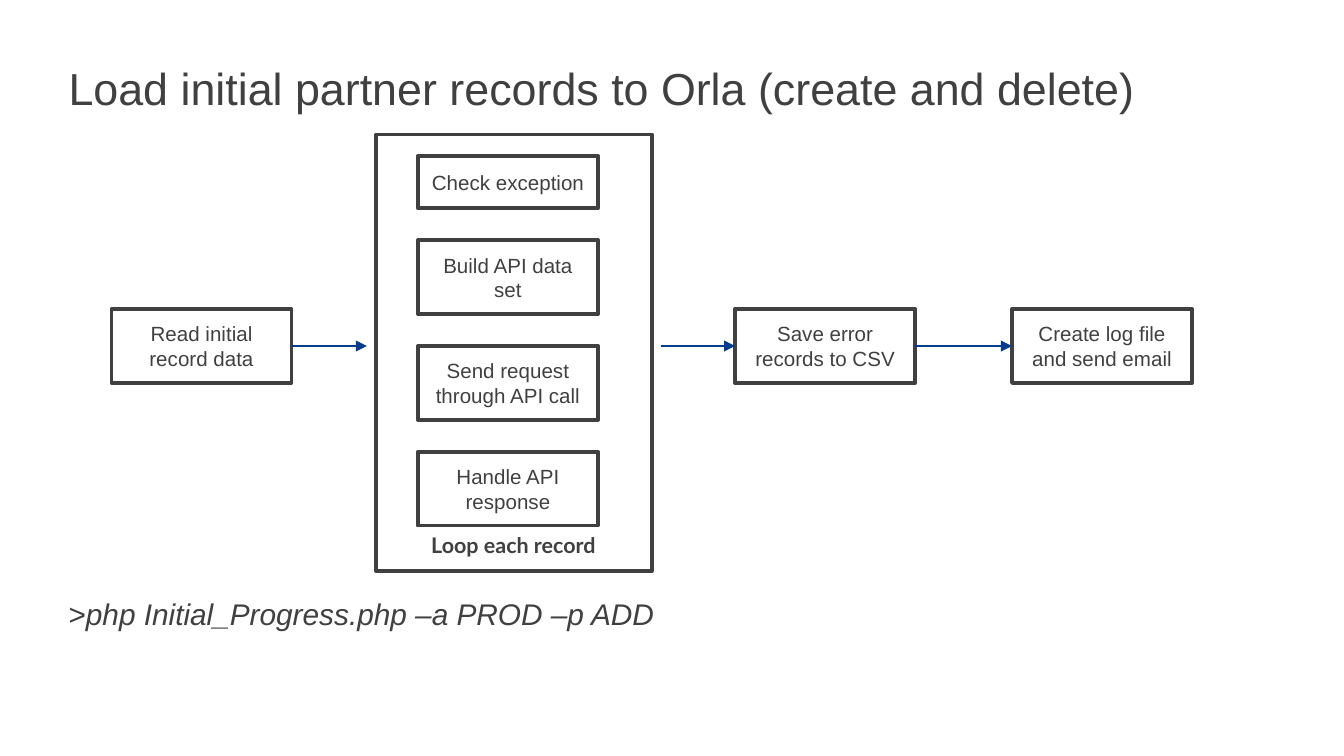
from collections import namedtuple

from lxml import etree
from pptx import Presentation
from pptx.dml.color import RGBColor
from pptx.enum.shapes import MSO_CONNECTOR, MSO_SHAPE
from pptx.enum.text import MSO_ANCHOR, PP_ALIGN
from pptx.oxml.ns import qn
from pptx.util import Inches, Pt

RECTANGLE = MSO_SHAPE.RECTANGLE
STRAIGHT = MSO_CONNECTOR.STRAIGHT
MIDDLE = MSO_ANCHOR.MIDDLE
CENTER = PP_ALIGN.CENTER

COLORS = {"ink": "404040", "paper": "FFFFFF", "arrow": "033C8D"}
CELL = Inches(0.1)
SLIDE_COLUMNS, SLIDE_ROWS = 100, 56.25
STEP_WIDTH, STEP_HEIGHT = 13.4, 5.5
SHORT_HEIGHT, STEP_GAP = 3.9, 2.37
LOOP_CLEARANCE = 0.7

Box = namedtuple("Box", "left top width height")


def grid(*cells):
    return [round(cell * CELL) for cell in cells]


def color(name):
    return RGBColor.from_string(COLORS[name])


def style_text(paragraph, size, font="Arial", bold=False):
    paragraph.font.name = font
    paragraph.font.size = Pt(size)
    paragraph.font.bold = bold
    paragraph.font.color.rgb = color("ink")


def add_text_frame(slide, box, inset):
    frame = slide.shapes.add_textbox(*grid(*box)).text_frame
    frame.word_wrap = True
    frame.margin_left = frame.margin_right = Inches(inset)
    frame.margin_top = frame.margin_bottom = Inches(inset / 2)
    return frame


def add_frame(slide, box):
    shape = slide.shapes.add_shape(RECTANGLE, *grid(*box))
    shape.shadow.inherit = False
    shape.fill.background()
    shape.line.color.rgb = color("ink")
    shape.line.width = Pt(2)
    return shape


def add_step(slide, box, text):
    shape = add_frame(slide, box)
    shape.fill.solid()
    shape.fill.fore_color.rgb = color("paper")
    frame = shape.text_frame
    frame.word_wrap = True
    frame.vertical_anchor = MIDDLE
    frame.text = text
    paragraph = frame.paragraphs[0]
    paragraph.alignment = CENTER
    style_text(paragraph, 11)


def add_arrow(slide, start, end, row):
    arrow = slide.shapes.add_connector(STRAIGHT, *grid(start, row, end, row))
    arrow.line.color.rgb = color("arrow")
    arrow.line.width = Pt(0.75)
    line = arrow.line._get_or_add_ln()
    etree.SubElement(line, qn("a:tailEnd"), type="triangle")
    etree.SubElement(arrow._element.spPr, qn("a:effectLst"))


def add_loop(slide, box):
    add_frame(slide, box)
    left, top = box.left + 3.1, box.top + 1.6
    steps = [
        ("Check exception", SHORT_HEIGHT),
        ("Build API data set", STEP_HEIGHT),
        ("Send request through API call", STEP_HEIGHT),
        ("Handle API response", STEP_HEIGHT),
    ]
    for text, height in steps:
        add_step(slide, Box(left, top, STEP_WIDTH, height), text)
        top += height + STEP_GAP
    label = add_text_frame(slide, Box(left, top - STEP_GAP, 14.9, 2.9), 0.1)
    label.text = "Loop each record"
    style_text(label.paragraphs[0], 11.5, font="Lato", bold=True)


def add_flow(slide, box):
    loop = Box(box.left + 19.7, box.top, 20.5, box.height)
    row = box.top + 15.75
    read_left = box.left
    save_left = box.left + 46.4
    log_left = box.left + box.width - STEP_WIDTH
    add_loop(slide, loop)
    for left, text in [
        (read_left, "Read initial record data"),
        (save_left, "Save error records to CSV"),
        (log_left, "Create log file and send email"),
    ]:
        step = Box(left, row - STEP_HEIGHT / 2, STEP_WIDTH, STEP_HEIGHT)
        add_step(slide, step, text)
    for start, end in [
        (read_left + STEP_WIDTH, loop.left - LOOP_CLEARANCE),
        (loop.left + loop.width + LOOP_CLEARANCE, save_left),
        (save_left + STEP_WIDTH, log_left),
    ]:
        add_arrow(slide, start, end, row)


def add_body(slide, box):
    frame = add_text_frame(slide, box, 0)
    frame.text = "Load initial partner records to Orla (create and delete)"
    style_text(frame.paragraphs[0], 24)
    command = frame.add_paragraph()
    command.text = ">"
    command.space_before = Pt(258)
    style_text(command, 16)
    run = command.add_run()
    run.text = "php Initial_Progress.php –a PROD –p ADD"
    run.font.italic = True


def main():
    presentation = Presentation()
    presentation.slide_width, presentation.slide_height = grid(
        SLIDE_COLUMNS, SLIDE_ROWS)
    slide = presentation.slides.add_slide(presentation.slide_layouts[6])
    add_body(slide, Box(5.1, 4.5, 89.8, 44.9))
    add_flow(slide, Box(8.3, 10, 80.4, 32.5))
    presentation.save("out.pptx")


if __name__ == "__main__":
    main()
